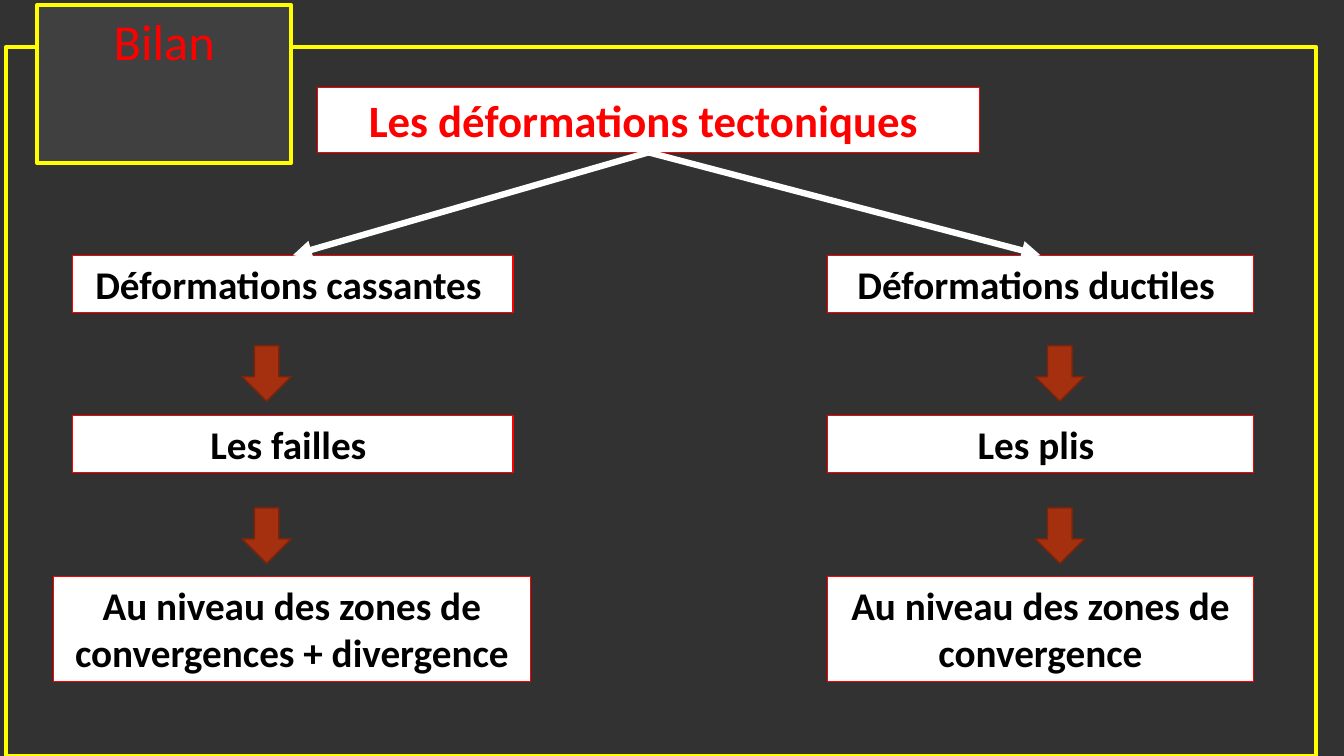
from dataclasses import dataclass

from lxml.etree import SubElement
from pptx import Presentation
from pptx.dml.color import RGBColor
from pptx.enum.shapes import MSO_CONNECTOR as Connector, MSO_SHAPE as Preset
from pptx.enum.text import MSO_ANCHOR as Anchor, MSO_AUTO_SIZE as AutoSize, PP_ALIGN as Align
from pptx.oxml.ns import qn
from pptx.shapes.autoshape import Shape
from pptx.slide import Slide
from pptx.util import Cm, Pt

CHARCOAL = RGBColor(0x32, 0x32, 0x32)
GREY = RGBColor(0x40, 0x40, 0x40)
WHITE = RGBColor(0xFF, 0xFF, 0xFF)
BLACK = RGBColor(0x00, 0x00, 0x00)
RED = RGBColor(0xFF, 0x00, 0x00)
YELLOW = RGBColor(0xFF, 0xFF, 0x00)
RUST = RGBColor(0xA5, 0x30, 0x0F)
DARK_RUST = RGBColor(0x7A, 0x24, 0x0B)


@dataclass
class Area:
    left: float
    top: float
    width: float
    height: float

    def lengths(self) -> tuple[Cm, Cm, Cm, Cm]:
        return Cm(self.left), Cm(self.top), Cm(self.width), Cm(self.height)


@dataclass
class Branch:
    left: float
    width: float
    arrow_left: float
    kind: str
    result: str
    place: str
    place_left: float
    place_width: float


BRANCHES = [
    Branch(1.83, 11.1, 6.1, "Déformations cassantes ", "Les failles ",
           "Au niveau des zones de convergences + divergence", 1.35, 12.01),
    Branch(20.85, 10.74, 26.09, "Déformations ductiles ", "Les plis ",
           "Au niveau des zones de convergence", 20.85, 10.74),
]
KIND_TOP, RESULT_TOP, PLACE_TOP = 6.43, 10.46, 14.53
ROW_HEIGHT, PLACE_HEIGHT = 1.45, 2.64
ARROW_TOPS = (8.71, 12.8)
ARROW_WIDTH, ARROW_HEIGHT = 1.24, 1.4


def paint(shape: Shape, fill: RGBColor | None, line: RGBColor, weight: float) -> None:
    if fill is None:
        shape.fill.background()
    else:
        shape.fill.solid()
        shape.fill.fore_color.rgb = fill
    shape.line.color.rgb = line
    shape.line.width = Pt(weight)


def write(shape: Shape, text: str, size: float, color: RGBColor, bold: bool) -> None:
    frame = shape.text_frame
    layout = {"word_wrap": True, "auto_size": AutoSize.SHAPE_TO_FIT_TEXT,
              "vertical_anchor": Anchor.TOP}
    for name, value in layout.items():
        setattr(frame, name, value)
    para = frame.paragraphs[0]
    para.alignment = Align.CENTER
    span = para.add_run()
    span.text = text
    for name, value in {"name": "Calibri", "size": Pt(size), "bold": bold}.items():
        setattr(span.font, name, value)
    span.font.color.rgb = color


def add_preset(page: Slide, preset: Preset, area: Area, fill: RGBColor | None,
               line: RGBColor, weight: float) -> Shape:
    shape = page.shapes.add_shape(preset, *area.lengths())
    shape.shadow.inherit = False
    paint(shape, fill, line, weight)
    return shape


def add_label(page: Slide, area: Area, text: str, size: float = 28,
              color: RGBColor = BLACK) -> Shape:
    box = add_preset(page, Preset.RECTANGLE, area, WHITE, RED, 0.75)
    write(box, text, size, color, True)
    return box


def link(page: Slide, parent: Shape, child: Shape) -> None:
    line = page.shapes.add_connector(Connector.STRAIGHT, 0, 0, 0, 0)
    line.begin_connect(parent, 2)
    line.end_connect(child, 0)
    line.line.color.rgb = WHITE
    line.line.width = Pt(4.5)
    SubElement(line.line._get_or_add_ln(), qn("a:tailEnd"), type="triangle")
    SubElement(line._element.spPr, qn("a:effectLst"))


def add_branch(page: Slide, root: Shape, branch: Branch) -> None:
    kind = add_label(page, Area(branch.left, KIND_TOP, branch.width, ROW_HEIGHT), branch.kind)
    add_label(page, Area(branch.left, RESULT_TOP, branch.width, ROW_HEIGHT), branch.result)
    add_label(page, Area(branch.place_left, PLACE_TOP, branch.place_width, PLACE_HEIGHT),
              branch.place)
    link(page, root, kind)
    for top in ARROW_TOPS:
        add_preset(page, Preset.DOWN_ARROW,
                   Area(branch.arrow_left, top, ARROW_WIDTH, ARROW_HEIGHT), RUST, DARK_RUST, 1)


def add_title(page: Slide, area: Area, text: str) -> None:
    title = page.shapes.title
    for name, value in zip(("left", "top", "width", "height"), area.lengths()):
        setattr(title, name, value)
    paint(title, GREY, YELLOW, 3)
    write(title, text, 36, RED, False)
    # The tab lies over the frame
    page.shapes._spTree.append(title._element)


def main() -> None:
    deck = Presentation()
    deck.slide_width, deck.slide_height = Cm(33.87), Cm(19.05)
    page = deck.slides.add_slide(deck.slide_layouts[5])
    page.background.fill.solid()
    page.background.fill.fore_color.rgb = CHARCOAL

    # Diagram
    root = add_label(page, Area(8, 2.21, 16.69, 1.63), "Les déformations tectoniques ", 32, RED)
    for branch in BRANCHES:
        add_branch(page, root, branch)

    # Frame and its title tab
    add_preset(page, Preset.RECTANGLE, Area(0.15, 1.19, 33.02, 17.86), None, YELLOW, 3)
    add_title(page, Area(0.94, 0.13, 6.4, 1.8), "Bilan")

    deck.save("out.pptx")


if __name__ == "__main__":
    main()
